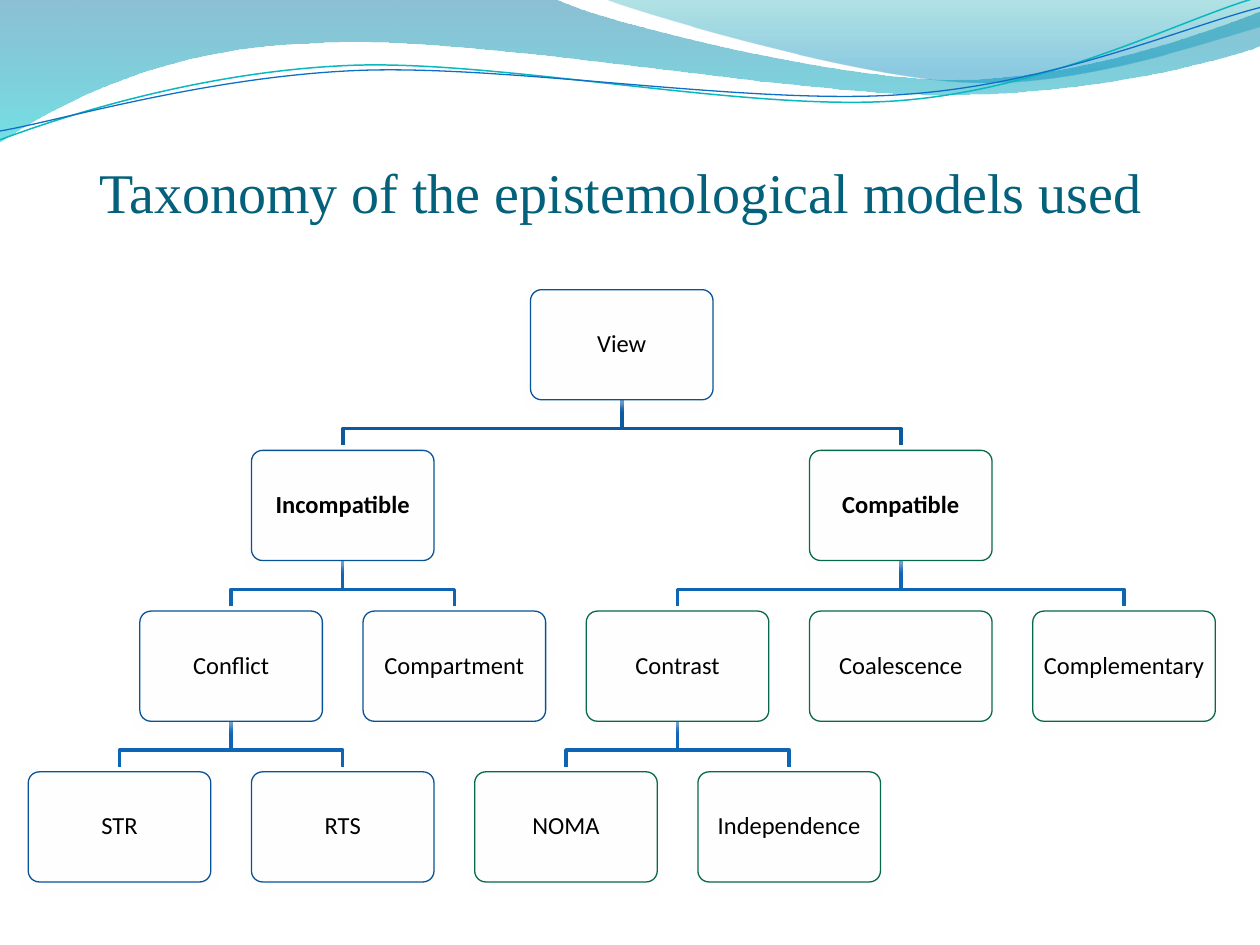
"""Build the slide with a wave header and a tree of epistemological views."""
from dataclasses import dataclass

from lxml.etree import SubElement
from pptx import Presentation
from pptx.dml.color import RGBColor
from pptx.enum.shapes import MSO_SHAPE
from pptx.enum.text import MSO_ANCHOR, MSO_AUTO_SIZE, PP_ALIGN
from pptx.oxml.ns import qn
from pptx.shapes.autoshape import Shape
from pptx.slide import Slide
from pptx.text.text import TextFrame
from pptx.util import Cm, Pt

Point = tuple[int, int]
WAVE_UNIT = Cm(0.0254)
BLUE, GREEN = "095295", "08684E"
TOP_LINK, LOWER_LINK = "0C599F", "0E65B4"


@dataclass
class GradientStop:
    position: float
    color: str
    opacity: int


@dataclass
class Wave:
    points: list[Point]
    segments: str
    stops: tuple[GradientStop, ...] = ()
    line_color: str = ""
    line_width: float = 0


@dataclass
class Node:
    label: str
    row: int
    column: float
    color: str
    parent: str = ""
    bold: bool = False
    linked: bool = True


WAVES = [
    Wave([(0, 0), (440, -1), (476, 17), (664, 63), (758, 63), (853, 63), (958, 26), (1000, 9),
          (1001, 36), (983, 44), (870, 76), (746, 75), (622, 75), (382, 28), (257, 34),
          (129, 36), (46, 83), (-1, 113), (0, 0)], "LCCLCCCL",
         (GradientStop(0, "0074A1", 45), GradientStop(1, "00C6CF", 55))),
    Wave([(479, -1), (509, 11), (682, 62), (769, 65), (856, 69), (961, 32), (1000, 21),
          (1000, 0), (479, -1)], "CCLL",
         (GradientStop(0, "00A1A9", 30), GradientStop(0.8, "008BBF", 45))),
    Wave([(0, 111), (48, 93), (158, 57), (277, 52), (395, 47), (593, 89), (713, 80),
          (833, 71), (938, 15), (998, -2)], "CCC", line_color="0AB8BF", line_width=0.85),
    Wave([(0, 104), (47, 96), (164, 61), (283, 56), (403, 51), (597, 84), (717, 75),
          (836, 67), (941, 21), (1000, 6)], "CCC", line_color="0F6FC6", line_width=0.75),
]

NODES = [
    Node("View", 0, 4.5, BLUE),
    Node("Incompatible", 1, 2, BLUE, "View", bold=True),
    Node("Compatible", 1, 7, GREEN, "View", bold=True),
    Node("Conflict", 2, 1, BLUE, "Incompatible"),
    Node("Compartment", 2, 3, BLUE, "Incompatible"),
    Node("Contrast", 2, 5, GREEN, "Compatible"),
    Node("Coalescence", 2, 7, GREEN, "Compatible", linked=False),
    Node("Complementary", 2, 9, GREEN, "Compatible"),
    Node("STR", 3, 0, BLUE, "Conflict"),
    Node("RTS", 3, 2, BLUE, "Conflict"),
    Node("NOMA", 3, 4, GREEN, "Contrast"),
    Node("Independence", 3, 6, GREEN, "Contrast"),
]


def rgb(color: str) -> RGBColor:
    """Turn a hex string into a colour."""
    return RGBColor.from_string(color)


def set_opacity(color_element, percent: int) -> None:
    """Make a colour element partly transparent."""
    SubElement(color_element, qn("a:alpha"), val=str(percent * 1000))


def set_line(shape: Shape, color: str, width: float) -> None:
    """Give a shape a solid outline."""
    shape.line.color.rgb = rgb(color)
    shape.line.width = Pt(width)


def format_text(text_frame: TextFrame, font: str, size: int, color: str, bold: bool = False) -> None:
    """Centre the text and format its runs."""
    for paragraph in text_frame.paragraphs:
        paragraph.alignment = PP_ALIGN.CENTER
        for run in paragraph.runs:
            run.font.name = font
            run.font.size = Pt(size)
            run.font.bold = bold
            run.font.color.rgb = rgb(color)


def draw_outline(slide: Slide, points: list[Point], scale: float = 1.0) -> Shape:
    """Draw an open outline without fill or shadow."""
    builder = slide.shapes.build_freeform(*points[0], scale=scale)
    builder.add_line_segments(points[1:], close=False)
    shape = builder.convert_to_shape()
    shape.shadow.inherit = False
    shape.fill.background()
    return shape


def draw_wave(slide: Slide, wave: Wave) -> None:
    """Draw one curved part of the header."""
    shape = draw_outline(slide, wave.points, WAVE_UNIT)
    edges = iter(shape._element.xpath(".//a:lnTo"))
    for segment in wave.segments:
        edge = next(edges)
        if segment == "C":
            edge.tag = qn("a:cubicBezTo")
            for _ in range(2):
                extra = next(edges)
                edge.append(extra[0])
                extra.getparent().remove(extra)
    if not wave.stops:
        set_line(shape, wave.line_color, wave.line_width)
        return
    shape.line.fill.background()
    shape.fill.gradient()
    shape.fill.gradient_angle = 270
    for gradient_stop, stop in zip(shape.fill.gradient_stops, wave.stops):
        gradient_stop.position = stop.position
        gradient_stop.color.rgb = rgb(stop.color)
    for element, stop in zip(shape._element.xpath(".//a:gradFill//a:srgbClr"), wave.stops):
        set_opacity(element, stop.opacity)


def draw_node(slide: Slide, node: Node) -> Shape:
    """Draw one rounded box of the tree."""
    shape = slide.shapes.add_shape(
        MSO_SHAPE.ROUNDED_RECTANGLE, Cm(0.57 + 2.25 * node.column), Cm(5.84 + 3.24 * node.row),
        Cm(3.68), Cm(2.22))
    shape.adjustments[0] = 0.1
    shape.fill.solid()
    shape.fill.fore_color.rgb = rgb("FFFFFF")
    set_opacity(shape._element.xpath("./p:spPr/a:solidFill/a:srgbClr")[0], 90)
    set_line(shape, node.color, 0.75)
    shape.shadow.inherit = False
    effects = shape._element.spPr.find(qn("a:effectLst"))
    shadow = SubElement(effects, qn("a:outerShdw"), blurRad=str(Pt(4.5)), dist=str(Pt(3)), dir="5400000")
    set_opacity(SubElement(shadow, qn("a:srgbClr"), val="FFFFFF"), 48)
    text_frame = shape.text_frame
    text_frame.text = node.label
    text_frame.word_wrap = True
    text_frame.vertical_anchor = MSO_ANCHOR.MIDDLE
    text_frame.margin_left = text_frame.margin_right = Cm(0.05)
    text_frame.margin_top = text_frame.margin_bottom = Cm(0.2)
    text_frame.paragraphs[0].line_spacing = 0.9
    format_text(text_frame, "Calibri", 14, "000000", node.bold)
    return shape


def draw_link(slide: Slide, parent: Shape, child: Shape, color: str) -> Shape:
    """Draw the bent line from a parent box down to a child box."""
    start_x = parent.left + parent.width // 2
    end_x = child.left + child.width // 2
    bottom = parent.top + parent.height
    middle = bottom + Cm(0.58)
    shape = draw_outline(
        slide, [(start_x, bottom), (start_x, middle), (end_x, middle), (end_x, child.top - Cm(0.1))])
    set_line(shape, color, 2)
    return shape


def draw_title(slide: Slide, text: str) -> None:
    """Place and format the title."""
    title = slide.shapes.title
    title.left, title.top, title.width, title.height = Cm(1.09), Cm(1.35), Cm(22.86), Cm(3.18)
    text_frame = title.text_frame
    text_frame.text = text
    text_frame.auto_size = MSO_AUTO_SIZE.NONE
    text_frame.vertical_anchor = MSO_ANCHOR.BOTTOM
    text_frame.margin_left = text_frame.margin_right = text_frame.margin_bottom = 0
    text_frame.margin_top = Cm(0.13)
    format_text(text_frame, "Times New Roman", 32, "04617B")


def main() -> None:
    """Build and save the presentation."""
    presentation = Presentation()
    presentation.slide_width, presentation.slide_height = Cm(25.4), Cm(19.05)
    slide = presentation.slides.add_slide(presentation.slide_layouts[5])
    for wave in WAVES:
        draw_wave(slide, wave)
    boxes = {node.label: draw_node(slide, node) for node in NODES}
    first_box = boxes["View"]._element
    for node in NODES:
        if node.parent and node.linked:
            color = TOP_LINK if node.row == 1 else LOWER_LINK
            link = draw_link(slide, boxes[node.parent], boxes[node.label], color)
            first_box.addprevious(link._element)
    draw_title(slide, "Taxonomy of the epistemological models used")
    presentation.save("out.pptx")


if __name__ == "__main__":
    main()
